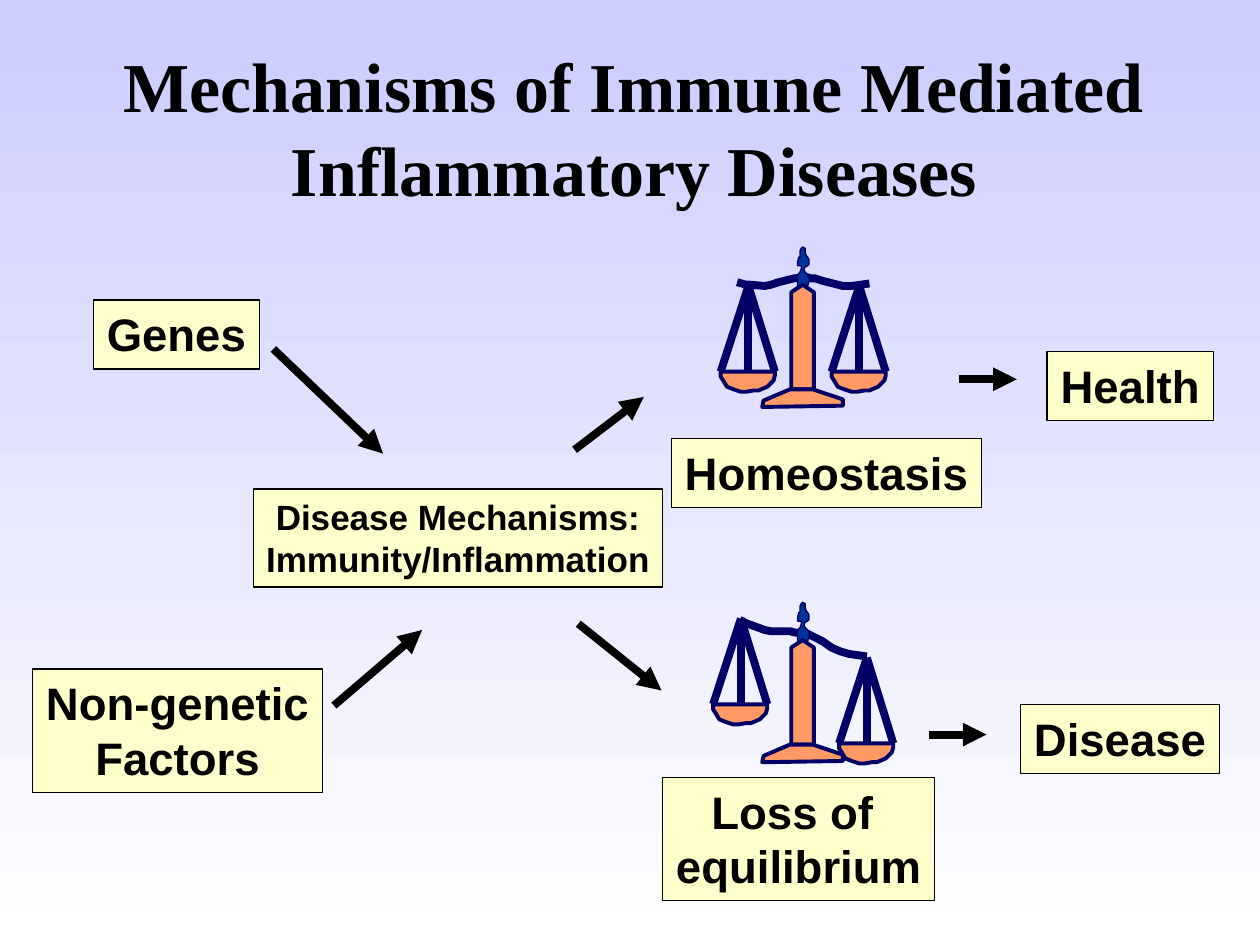
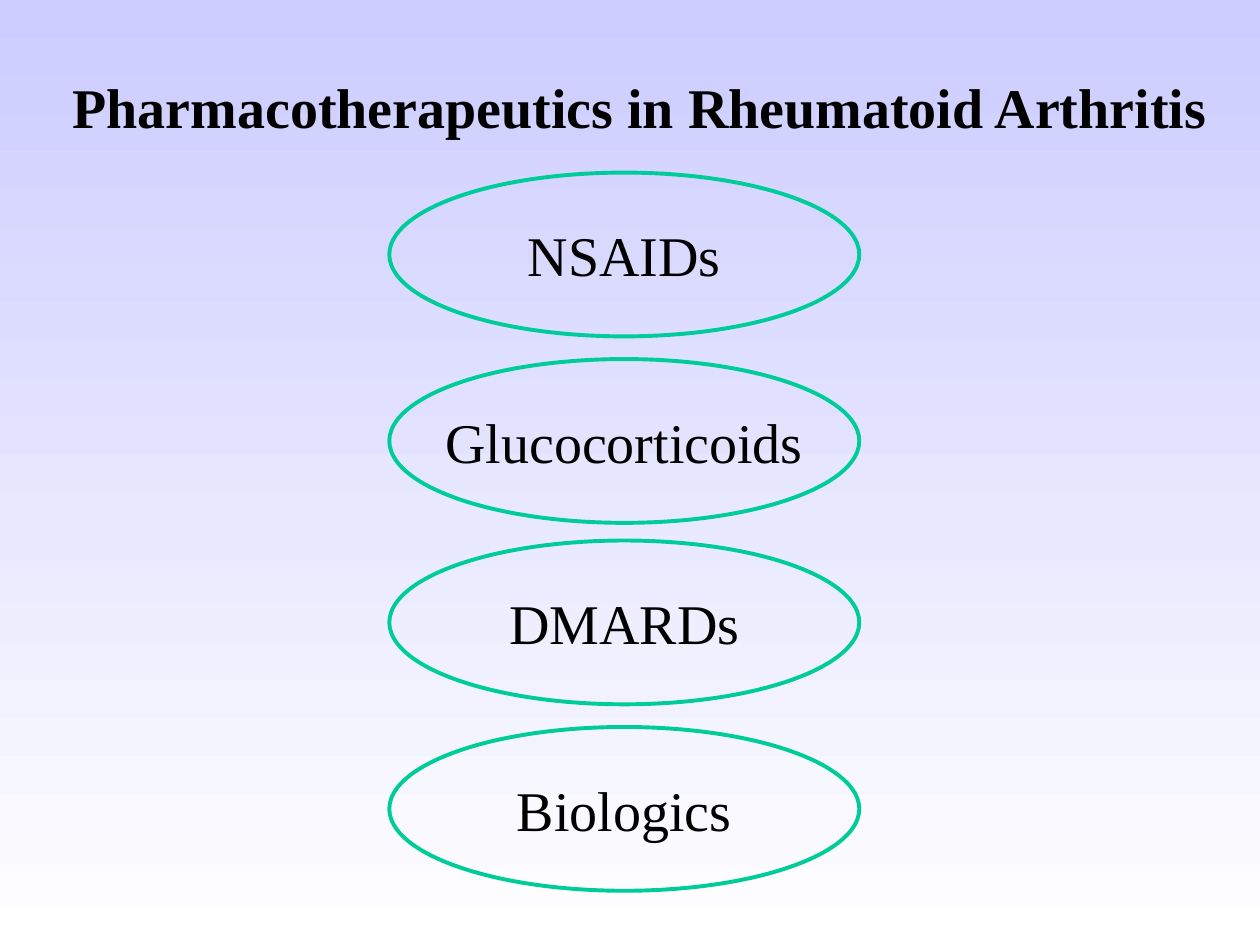
"""Build two slides on immune mediated disease and the drugs for rheumatoid arthritis."""
from lxml import etree
from pptx import Presentation
from pptx.dml.color import RGBColor
from pptx.enum.shapes import MSO_CONNECTOR, MSO_SHAPE
from pptx.enum.text import MSO_ANCHOR, MSO_AUTO_SIZE, PP_ALIGN
from pptx.oxml.ns import qn
from pptx.util import Pt

PX = 9144
RECTANGLE, ELLIPSE = MSO_SHAPE.RECTANGLE, MSO_SHAPE.OVAL
STRAIGHT = MSO_CONNECTOR.STRAIGHT
TOP, MIDDLE = MSO_ANCHOR.TOP, MSO_ANCHOR.MIDDLE
CENTER = PP_ALIGN.CENTER
GROW = MSO_AUTO_SIZE.SHAPE_TO_FIT_TEXT
SERIF, SANS = "Times New Roman", "Arial"
COLORS = {
    "sky": "CCCCFF", "white": "FFFFFF", "ink": "000000", "cream": "FFFFCC",
    "navy": "000066", "flame": "003399", "copper": "FF9966", "green": "00CC99",
}

MECHANISMS_TITLE = ("Mechanisms of Immune Mediated Inflammatory Diseases", (78, 38, 850, 125), 40)
THERAPY_TITLE = ("Pharmacotherapeutics in Rheumatoid Arthritis", (42, 22, 932, 125), 32)

LABELS = [
    ("Genes", (74, 238, 132, 55), 26),
    ("Non-genetic\nFactors", (26, 531, 230, 98), 26),
    ("Disease Mechanisms:\nImmunity/Inflammation", (201, 388, 325, 78), 20),
    ("Loss of \nequilibrium", (526, 617, 216, 98), 26),
    ("Disease", (810, 559, 158, 55), 26),
    ("Homeostasis", (533, 348, 246, 55), 26),
    ("Health", (831, 279, 132, 55), 26),
]
ARROWS = [
    ((217, 277), (304, 360)), ((265, 560), (335, 500)), ((737, 583), (783, 583)),
    ((761, 301), (807, 301)), ((459, 495), (525, 548)), ((456, 357), (511, 315)),
]

LEVEL_BEAM = [
    (-52, 28), (-45, 30), (-42, 30), (-30, 31), (-25, 30), (-19, 28), (-11, 26), (-7, 25), (3, 24),
    (7, 25), (10, 25), (16, 27), (24, 29), (32, 31), (39, 31), (46, 30), (53, 29),
]
TILTED_BEAM = [
    (-50, 14), (-44, 17), (-41, 18), (-30, 22), (-25, 23), (-18, 23), (-10, 23), (-6, 24), (4, 25),
    (8, 27), (10, 28), (16, 31), (23, 36), (30, 39), (37, 41), (44, 42), (51, 43),
]
BALANCES = [
    {"apex": (637, 196), "hooks": [(594, 227), (682, 227)], "beam": LEVEL_BEAM},
    {"apex": (637, 478), "hooks": [(588, 491), (688, 522)], "beam": TILTED_BEAM},
]
PAN = [
    (-22, 68), (21, 68), (21, 71), (20, 75), (18, 77), (15, 80), (8, 83), (4, 83),
    (-2, 84), (-6, 84), (-12, 82), (-17, 80), (-20, 75), (-22, 72),
]
CORD_ENDS = [(-22, 68), (21, 68), (0, 68)]
POST = [(0, 30), (9, 36), (9, 113), (-9, 113), (-9, 36)]
FOOT = [(8, 113), (32, 121), (32, 126), (-32, 127), (-31, 122), (-10, 113)]
FLAME = [
    (0, 0), (2, 1), (2, 4), (3, 7), (4, 8), (5, 10), (5, 14), (4, 15), (2, 16), (1, 18), (2, 20),
    (4, 22), (5, 24), (5, 28), (4, 31), (0, 29), (-3, 31), (-4, 31), (-4, 22), (-2, 20), (-1, 17),
    (-1, 15), (-4, 15), (-4, 12), (-3, 8), (-2, 8), (-2, 3), (-1, 1),
]

DRUG_LEFT, DRUG_WIDTH, DRUG_HEIGHT = 309, 373, 130
DRUGS = [("NSAIDs", 137), ("Glucocorticoids", 285), ("DMARDs", 429), ("Biologics", 577)]


def rgb(name):
    """Return the named colour."""
    return RGBColor.from_string(COLORS[name])


def scaled(numbers):
    """Turn px into EMU."""
    return [number * PX for number in numbers]


def moved(points, origin):
    """Shift points so that they start from the origin."""
    return [(origin[0] + x, origin[1] + y) for x, y in points]


def write(frame, text, size, font=SERIF, bold=False, anchor=MIDDLE, wrap=False):
    """Fill a text frame with centred lines in one format."""
    frame.word_wrap = wrap
    frame.vertical_anchor = anchor
    for index, line in enumerate(text.split("\n")):
        para = frame.add_paragraph() if index else frame.paragraphs[0]
        para.alignment = CENTER
        span = para.add_run()
        span.text = line
        span.font.name, span.font.size, span.font.bold = font, Pt(size), bold
        span.font.color.rgb = rgb("ink")


def paint(shape, line, width, fill=None):
    """Set the fill and outline of a shape and drop its shadow."""
    shape.shadow.inherit = False
    if fill:
        shape.fill.solid()
        shape.fill.fore_color.rgb = rgb(fill)
    else:
        shape.fill.background()
    shape.line.color.rgb = rgb(line)
    shape.line.width = Pt(width)


def add_line(shapes, start, end, color, arrow=False):
    """Draw a thick straight line, with an arrowhead at its end if wanted."""
    line = shapes.add_connector(STRAIGHT, *scaled(start + end))
    line.line.color.rgb = rgb(color)
    line.line.width = Pt(4.5)
    properties = line.element.spPr
    if arrow:
        etree.SubElement(properties.find(qn("a:ln")), qn("a:tailEnd"), type="triangle")
    etree.SubElement(properties, qn("a:effectLst"))


def add_outline(shapes, points, width, fill=None):
    """Draw a navy outline, closed when it has a fill."""
    builder = shapes.build_freeform(*points[0], scale=PX)
    builder.add_line_segments(points[1:], close=bool(fill))
    paint(builder.convert_to_shape(), "navy", width, fill)


def add_balance(page, apex, hooks, beam):
    """Draw a pair of scales as one group."""
    shapes = page.shapes.add_group_shape().shapes
    for hook in hooks:
        add_outline(shapes, moved(PAN, hook), 2.25, "copper")
    for part in (POST, FOOT):
        add_outline(shapes, moved(part, apex), 2.25, "copper")
    for hook in hooks:
        for end in moved(CORD_ENDS, hook):
            add_line(shapes, hook, end, "navy")
    add_outline(shapes, moved(beam, apex), 4.5)
    add_outline(shapes, moved(FLAME, apex), 0.75, "flame")


def add_page(deck, title, place, size):
    """Add a blank page with its title."""
    page = deck.slides.add_slide(deck.slide_layouts[6])
    box = page.shapes.add_textbox(*scaled(place))
    write(box.text_frame, title, size, bold=True, wrap=True)
    return page


def build_mechanisms(deck):
    """Build the page of causes and outcomes."""
    page = add_page(deck, *MECHANISMS_TITLE)
    for text, place, size in LABELS:
        box = page.shapes.add_shape(RECTANGLE, *scaled(place))
        paint(box, "ink", 0.75, "cream")
        write(box.text_frame, text, size, font=SANS, bold=True, anchor=TOP)
        box.text_frame.auto_size = GROW
    for balance in BALANCES:
        add_balance(page, **balance)
    for start, end in ARROWS:
        add_line(page.shapes, start, end, "ink", arrow=True)


def build_therapy(deck):
    """Build the page of drug classes."""
    page = add_page(deck, *THERAPY_TITLE)
    for name, top in DRUGS:
        oval = page.shapes.add_shape(ELLIPSE, *scaled((DRUG_LEFT, top, DRUG_WIDTH, DRUG_HEIGHT)))
        paint(oval, "green", 2.25)
        write(oval.text_frame, name, 32)


def main():
    """Build and save the deck."""
    deck = Presentation()
    deck.slide_width, deck.slide_height = scaled((1000, 750))
    backdrop = deck.slide_master.background.fill
    backdrop.gradient()
    backdrop.gradient_angle = 270
    for stop, position, color in zip(backdrop.gradient_stops, (0, 1), ("sky", "white")):
        stop.position = position
        stop.color.rgb = rgb(color)
    build_mechanisms(deck)
    build_therapy(deck)
    deck.save("out.pptx")


if __name__ == "__main__":
    main()
